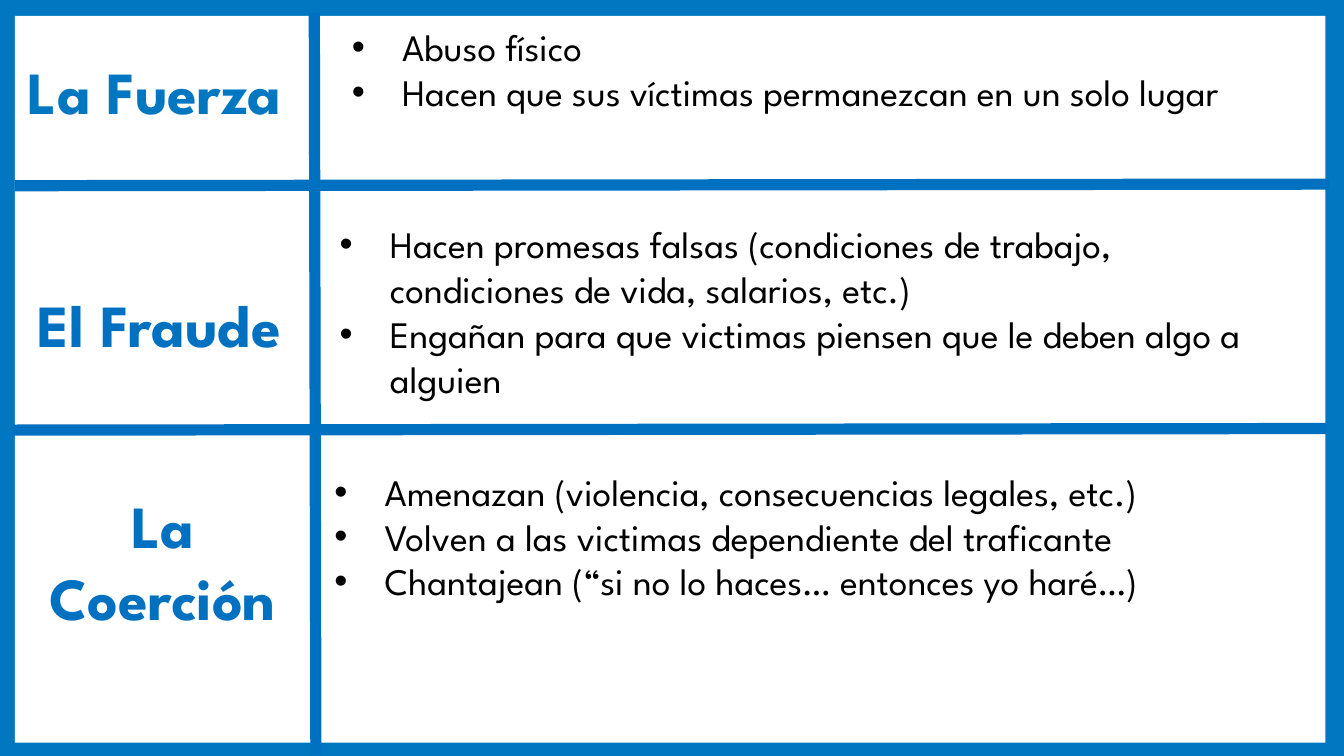
from dataclasses import dataclass

from lxml.etree import SubElement
from pptx import Presentation
from pptx.dml.color import RGBColor
from pptx.enum.shapes import MSO_CONNECTOR, MSO_SHAPE
from pptx.enum.text import PP_ALIGN
from pptx.oxml.ns import qn
from pptx.slide import Slide
from pptx.text.text import _Paragraph
from pptx.util import Cm, Pt


@dataclass(frozen=True)
class Theme:
    font: str = "League Spartan"
    border: RGBColor = RGBColor(0x00, 0x77, 0xC0)
    accent: RGBColor = RGBColor(0x00, 0x70, 0xC0)
    panel: RGBColor = RGBColor(0xFF, 0xFF, 0xFF)
    body: RGBColor = RGBColor(0x00, 0x00, 0x00)
    heading_size: Pt = Pt(32)
    body_size: Pt = Pt(20)
    divider_width: Pt = Pt(6)
    bullet_indent: Cm = Cm(0.95)


@dataclass(frozen=True)
class Box:
    left: float
    top: float
    width: float
    height: float


@dataclass(frozen=True)
class Divider:
    start_x: float
    start_y: float
    end_x: float
    end_y: float


@dataclass(frozen=True)
class Row:
    heading: str
    heading_box: Box
    heading_color: RGBColor
    alignment: PP_ALIGN
    bullets: tuple[str, ...]
    bullet_box: Box


THEME = Theme()

PANEL = Box(0.28, 0.3, 24.77, 13.74)

DIVIDERS = (
    Divider(0.28, 3.51, 25.12, 3.48),
    Divider(0.25, 8.13, 25.07, 8.1),
    Divider(5.94, 0.25, 5.97, 14.27),
)

ROWS = (
    Row(
        "La Fuerza", Box(0.28, 0.91, 5.69, 1.63), THEME.border, PP_ALIGN.LEFT,
        ("Abuso físico", "Hacen que sus víctimas permanezcan en un solo lugar"),
        Box(6.4, 0.33, 18.24, 2.82),
    ),
    Row(
        "El Fraude", Box(0.46, 5.31, 5.69, 1.63), THEME.accent, PP_ALIGN.LEFT,
        (
            "Hacen promesas falsas (condiciones de trabajo, condiciones de vida, salarios, etc.)",
            "Engañan para que victimas piensen que le deben algo a alguien",
        ),
        Box(6.17, 4.06, 18.29, 3.68),
    ),
    Row(
        "La Coerción", Box(0.05, 9.12, 6.05, 3), THEME.accent, PP_ALIGN.CENTER,
        (
            "Amenazan (violencia, consecuencias legales, etc.)",
            "Volven a las victimas dependiente del traficante",
            "Chantajean (“si no lo haces… entonces yo haré…)",
        ),
        Box(6.07, 8.74, 18.29, 4.52),
    ),
)


def add_panel(slide: Slide, box: Box) -> None:
    shape = slide.shapes.add_shape(
        MSO_SHAPE.RECTANGLE, Cm(box.left), Cm(box.top), Cm(box.width), Cm(box.height)
    )
    shape.shadow.inherit = False
    shape.fill.solid()
    shape.fill.fore_color.rgb = THEME.panel
    shape.line.fill.background()


def add_divider(slide: Slide, divider: Divider) -> None:
    connector = slide.shapes.add_connector(
        MSO_CONNECTOR.STRAIGHT,
        Cm(divider.start_x), Cm(divider.start_y), Cm(divider.end_x), Cm(divider.end_y),
    )
    connector.line.color.rgb = THEME.accent
    connector.line.width = THEME.divider_width
    SubElement(connector._element.spPr, qn("a:effectLst"))


def add_bullet(paragraph: _Paragraph) -> None:
    properties = paragraph._p.get_or_add_pPr()
    properties.set("marL", str(THEME.bullet_indent))
    properties.set("indent", str(-THEME.bullet_indent))
    color = SubElement(properties, qn("a:buClr"))
    SubElement(color, qn("a:srgbClr"), val=str(THEME.body))
    SubElement(properties, qn("a:buFont"), typeface="Arial")
    SubElement(properties, qn("a:buChar"), char="•")


def add_text(
    slide: Slide, box: Box, lines: tuple[str, ...], size: Pt, color: RGBColor,
    alignment: PP_ALIGN = PP_ALIGN.LEFT, bold: bool = False, bulleted: bool = False,
) -> None:
    text_box = slide.shapes.add_textbox(
        Cm(box.left), Cm(box.top), Cm(box.width), Cm(box.height)
    )
    frame = text_box.text_frame
    frame.word_wrap = True
    frame.text = "\n".join(lines)
    for paragraph in frame.paragraphs:
        if bulleted:
            add_bullet(paragraph)
        paragraph.alignment = alignment
        paragraph.font.name = THEME.font
        paragraph.font.size = size
        paragraph.font.bold = bold
        paragraph.font.color.rgb = color


def add_row(slide: Slide, row: Row) -> None:
    add_text(
        slide, row.heading_box, (row.heading,), THEME.heading_size,
        row.heading_color, row.alignment, bold=True,
    )
    add_text(
        slide, row.bullet_box, row.bullets, THEME.body_size, THEME.body, bulleted=True
    )


def main() -> None:
    presentation = Presentation()
    presentation.slide_width = Cm(25.4)
    presentation.slide_height = Cm(14.29)
    slide = presentation.slides.add_slide(presentation.slide_layouts[6])
    slide.background.fill.solid()
    slide.background.fill.fore_color.rgb = THEME.border

    add_panel(slide, PANEL)
    for divider in DIVIDERS:
        add_divider(slide, divider)
    for row in ROWS:
        add_row(slide, row)

    presentation.save("out.pptx")


if __name__ == "__main__":
    main()
